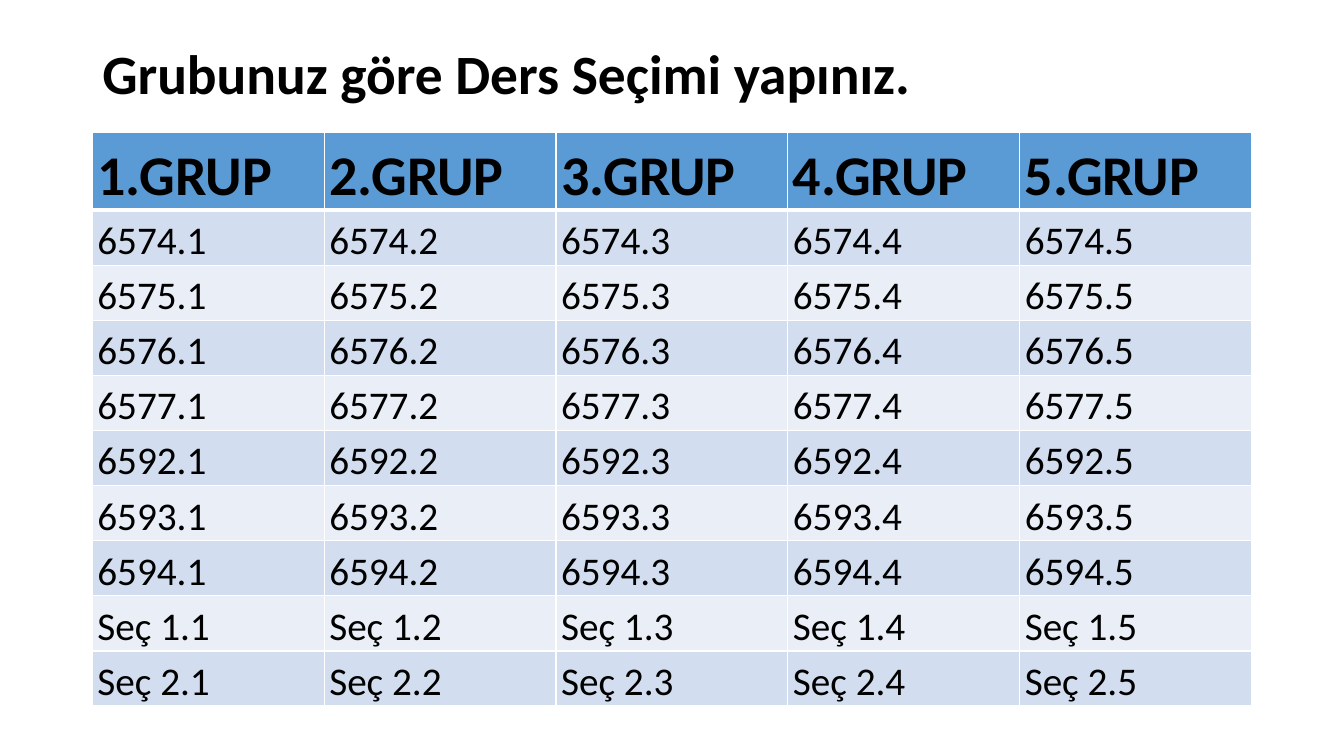
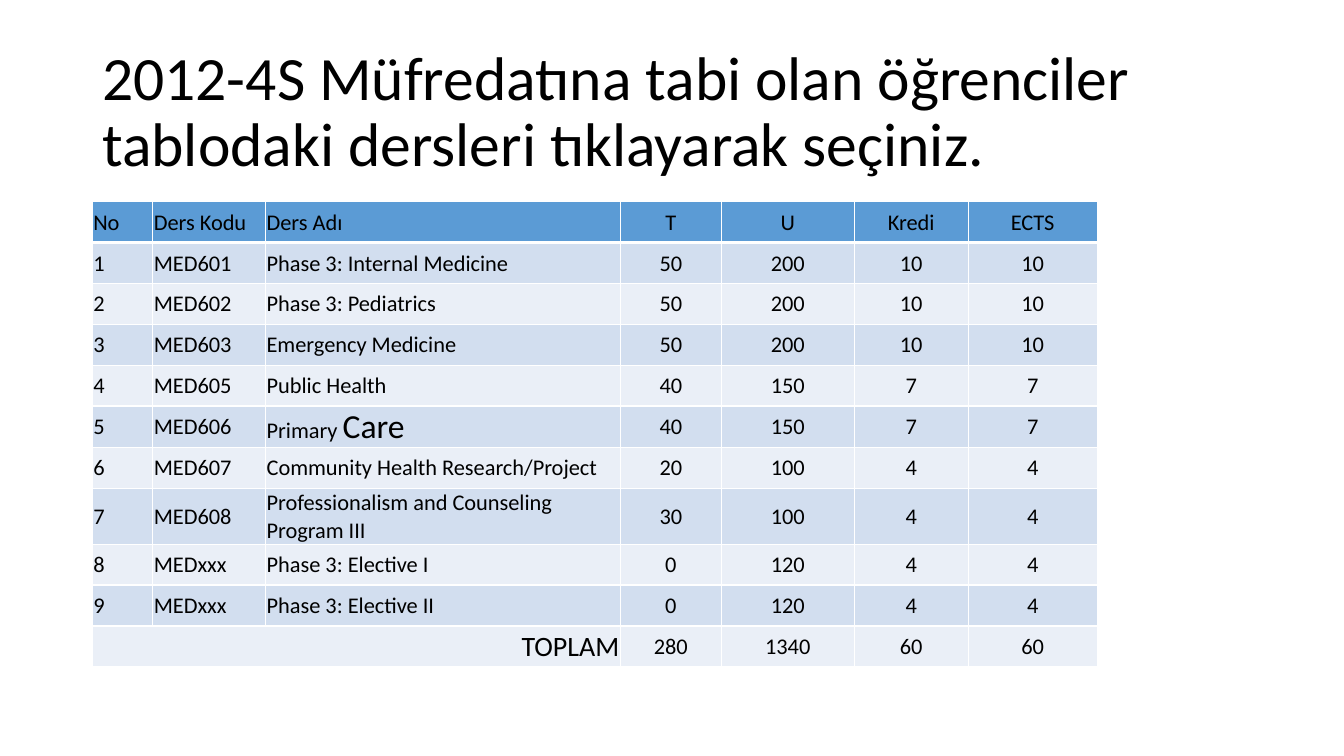
from dataclasses import dataclass

from lxml.etree import SubElement
from pptx import Presentation
from pptx.dml.color import RGBColor as RGB
from pptx.enum.text import MSO_ANCHOR as Anchor, PP_ALIGN as Align
from pptx.oxml.ns import qn
from pptx.util import Pt


@dataclass(frozen=True)
class Theme:
    font: str = "Calibri"
    text: str = "000000"
    header: str = "5B9BD5"
    bands: tuple = ("D2DEEF", "EAEFF7")
    border: str = "FFFFFF"
    thin: int = 1
    thick: int = 3
    left: int = 66
    title_top: float = 28.8
    width: int = 828


THEME = Theme()

# Content: a cell is a text, or a list of (text, size) runs
GROUPS = range(1, 6)
COURSES = ["6574.", "6575.", "6576.", "6577.", "6592.", "6593.", "6594.", "Seç 1.", "Seç 2."]
GROUP_ROWS = [[f"{group}.GRUP" for group in GROUPS]]
GROUP_ROWS += [[f"{course}{group}" for group in GROUPS] for course in COURSES]

CURRICULUM_ROWS = [
    ["No", "Ders Kodu", "Ders Adı", "T", "U", "Kredi", "ECTS"],
    ["1", "MED601", "Phase 3: Internal Medicine", "50", "200", "10", "10"],
    ["2", "MED602", "Phase 3: Pediatrics", "50", "200", "10", "10"],
    ["3", "MED603", "Emergency Medicine", "50", "200", "10", "10"],
    ["4", "MED605", "Public Health", "40", "150", "7", "7"],
    ["5", "MED606", [("Primary ", 16), ("Care", 24)], "40", "150", "7", "7"],
    ["6", "MED607", "Community Health Research/Project", "20", "100", "4", "4"],
    ["7", "MED608", "Professionalism and Counseling Program III", "30", "100", "4", "4"],
    ["8", "MEDxxx", "Phase 3: Elective I", "0", "120", "4", "4"],
    ["9", "MEDxxx", "Phase 3: Elective II", "0", "120", "4", "4"],
    [[("TOPLAM", 20)], None, None, "280", "1340", "60", "60"],
]

SLIDES = [
    {
        "title": {"text": "Grubunuz göre Ders Seçimi yapınız.", "height": 52, "size": 39.6, "bold": True},
        "table": {
            "rows": GROUP_ROWS,
            "top": 94.3,
            "columns": [THEME.width / len(GROUPS)] * len(GROUPS),
            "heights": [55.7] + [39.4] * len(COURSES),
            "sizes": (40, 28),
            "bold_header": True,
            "line_spacing": 1.15,
            "margins": (3.6, 0, 3.6, 0),
            "bottom_rows": (0, 8, 9),
            "aligns": [Align.LEFT] * len(GROUPS),
        },
    },
    {
        "title": {
            "text": "2012-4S Müfredatına tabi olan öğrenciler tablodaki dersleri tıklayarak seçiniz.",
            "height": 104.4, "size": 44, "bold": False,
        },
        "table": {
            "rows": CURRICULUM_ROWS,
            "top": 144,
            "columns": [43.2, 80.6, 253.4, 72, 95, 81.4, 92.2],
            "heights": [40 if row[0] == "7" else 29.2 for row in CURRICULUM_ROWS],
            "sizes": (16, 16),
            "bold_header": False,
            "line_spacing": 1.0,
            "margins": (0.7, 0.7, 0.7, 0),
            "bottom_rows": (),
            "aligns": [Align.LEFT] * 3 + [Align.CENTER] * 4,
        },
    },
]


def set_values(target, values):
    for name, value in values.items():
        setattr(target, name, value)


def write_runs(paragraph, runs, bold):
    for text, size in runs:
        run = paragraph.add_run()
        run.text = text
        set_values(run.font, {"name": THEME.font, "size": Pt(size), "bold": bold})
        run.font.color.rgb = RGB.from_string(THEME.text)


def add_title(slide, title):
    shape = slide.shapes.add_textbox(
        Pt(THEME.left), Pt(THEME.title_top), Pt(THEME.width), Pt(title["height"]))
    set_values(shape.text_frame, {"word_wrap": True, "vertical_anchor": Anchor.MIDDLE})
    paragraph = shape.text_frame.paragraphs[0]
    paragraph.line_spacing = 0.9
    write_runs(paragraph, [(title["text"], title["size"])], title["bold"])


def set_borders(cell, row_index):
    properties = cell._tc.get_or_add_tcPr()
    widths = {"lnL": THEME.thin, "lnR": THEME.thin,
              "lnT": THEME.thick if row_index == 1 else THEME.thin,
              "lnB": THEME.thick if row_index == 0 else THEME.thin}
    for side, width in widths.items():
        line = SubElement(properties, qn(f"a:{side}"), w=str(Pt(width)))
        fill = SubElement(line, qn("a:solidFill"))
        SubElement(fill, qn("a:srgbClr"), val=THEME.border)


def format_cell(cell, row_index, column_index, content, layout):
    is_header = row_index == 0
    # Borders come before the fill in the cell properties
    set_borders(cell, row_index)
    cell.fill.solid()
    color = THEME.header if is_header else THEME.bands[(row_index - 1) % 2]
    cell.fill.fore_color.rgb = RGB.from_string(color)
    left, top, right, bottom = map(Pt, layout["margins"])
    set_values(cell, {
        "margin_left": left, "margin_top": top, "margin_right": right, "margin_bottom": bottom,
        "vertical_anchor": Anchor.BOTTOM if row_index in layout["bottom_rows"] else Anchor.MIDDLE,
    })
    if content is None:
        return
    paragraph = cell.text_frame.paragraphs[0]
    set_values(paragraph, {
        "alignment": Align.RIGHT if cell.is_merge_origin else layout["aligns"][column_index],
        "line_spacing": layout["line_spacing"],
    })
    size = layout["sizes"][0 if is_header else 1]
    runs = [(content, size)] if isinstance(content, str) else content
    write_runs(paragraph, runs, is_header and layout["bold_header"])


def add_grid(slide, layout):
    rows, columns, heights = layout["rows"], layout["columns"], layout["heights"]
    table = slide.shapes.add_table(
        len(rows), len(columns), Pt(THEME.left), Pt(layout["top"]),
        Pt(sum(columns)), Pt(sum(heights))).table
    for column, width in zip(table.columns, columns):
        column.width = Pt(width)
    for row_index, (row, height) in enumerate(zip(rows, heights)):
        table.rows[row_index].height = Pt(height)
        # Empty entries belong to the first cell of the row
        merged = row.count(None)
        if merged:
            table.cell(row_index, 0).merge(table.cell(row_index, merged))
        for column_index, content in enumerate(row):
            format_cell(table.cell(row_index, column_index), row_index, column_index, content, layout)


def main():
    presentation = Presentation()
    set_values(presentation, {"slide_width": Pt(960), "slide_height": Pt(540)})
    for content in SLIDES:
        slide = presentation.slides.add_slide(presentation.slide_layouts[6])
        add_title(slide, content["title"])
        add_grid(slide, content["table"])
    presentation.save("out.pptx")


if __name__ == "__main__":
    main()
